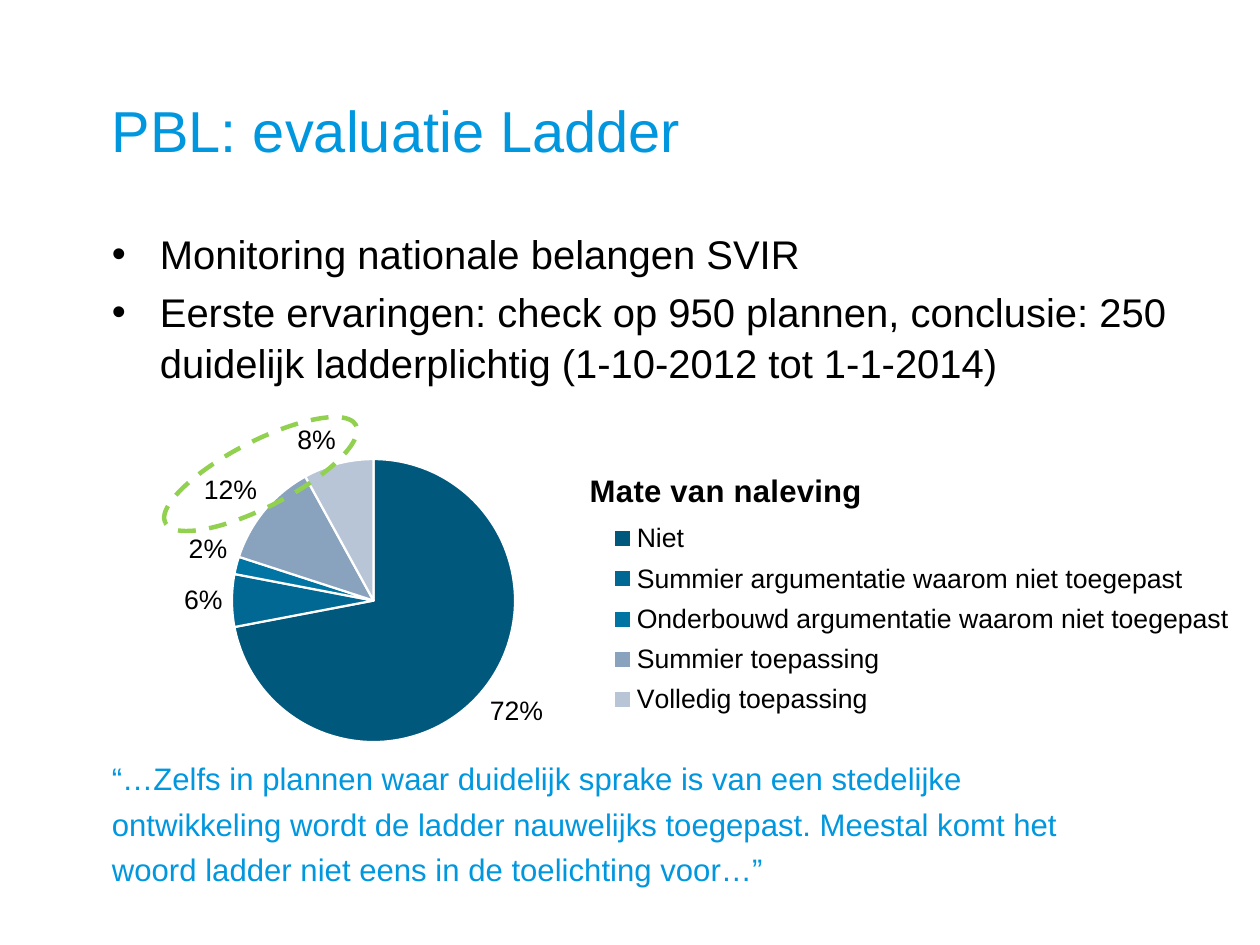
from dataclasses import dataclass

from lxml import etree
from pptx import Presentation
from pptx import util as u
from pptx.chart.data import CategoryChartData
from pptx.dml.color import RGBColor
from pptx.enum import chart as charts, dml, shapes, text
from pptx.oxml import ns

FONT = "Arial"
BLUE = RGBColor(0x01, 0x97, 0xDF)
BLACK = RGBColor(0x00, 0x00, 0x00)
WHITE = RGBColor(0xFF, 0xFF, 0xFF)
GREEN = RGBColor(0x92, 0xD0, 0x50)


@dataclass(frozen=True)
class Box:
    left: float
    top: float
    width: float
    height: float

    def lengths(self) -> tuple:
        return tuple(u.Inches(n) for n in (self.left, self.top, self.width, self.height))


@dataclass(frozen=True)
class TextStyle:
    size: float
    color: RGBColor
    line_spacing: float = 1.0
    space_before: float = 0
    bulleted: bool = False


@dataclass(frozen=True)
class Slice:
    label: str
    value: int
    color: RGBColor


TITLE_STYLE = TextStyle(26, BLUE)
LIST_STYLE = TextStyle(18, BLACK, 1.05, 3.6, True)
QUOTE_STYLE = TextStyle(14, BLUE, 1.05, 2.8)

BULLETS = [
    "Monitoring nationale belangen SVIR",
    "Eerste ervaringen: check op 950 plannen, conclusie: 250 duidelijk "
    "ladderplichtig (1-10-2012 tot 1-1-2014)",
]
QUOTE = [
    "“…Zelfs in plannen waar duidelijk sprake is van een stedelijke",
    "ontwikkeling wordt de ladder nauwelijks toegepast. Meestal komt het",
    "woord ladder niet eens in de toelichting voor…”",
]
CHART_TITLE = "Mate van naleving"
SLICES = [
    Slice("Niet", 72, RGBColor(0x00, 0x59, 0x7D)),
    Slice("Summier argumentatie waarom niet toegepast", 6, RGBColor(0x00, 0x68, 0x92)),
    Slice("Onderbouwd argumentatie waarom niet toegepast", 2, RGBColor(0x00, 0x75, 0xA4)),
    Slice("Summier toepassing", 12, RGBColor(0x89, 0xA3, 0xBF)),
    Slice("Volledig toepassing", 8, RGBColor(0xB8, 0xC5, 0xD6)),
]


def set_font(font, size: float, color: RGBColor = BLACK, bold: bool = False) -> None:
    font.name = FONT
    font.size = u.Pt(size)
    font.bold = bold
    font.color.rgb = color


def write_text(shape, box: Box, lines: list[str], style: TextStyle) -> None:
    shape.left, shape.top, shape.width, shape.height = box.lengths()
    frame = shape.text_frame
    frame.word_wrap = True
    frame.auto_size = text.MSO_AUTO_SIZE.NONE
    frame.vertical_anchor = text.MSO_ANCHOR.TOP
    frame.margin_left = frame.margin_right = u.Inches(0.08)
    frame.margin_top = frame.margin_bottom = u.Inches(0.04)
    for index, line in enumerate(lines):
        paragraph = frame.add_paragraph() if index else frame.paragraphs[0]
        paragraph.alignment = text.PP_ALIGN.LEFT
        paragraph.line_spacing = style.line_spacing
        paragraph.space_before = u.Pt(style.space_before if index else 0)
        if style.bulleted:
            properties = paragraph._p.get_or_add_pPr()
            properties.set("marL", str(u.Inches(0.3)))
            properties.set("indent", str(-u.Inches(0.3)))
            etree.SubElement(properties, ns.qn("a:buChar")).set("char", "•")
        run = paragraph.add_run()
        run.text = line
        set_font(run.font, style.size, style.color)


def place_part(part, position: int, **fractions: float) -> None:
    for layout in part.findall(ns.qn("c:layout")):
        part.remove(layout)
    layout = etree.Element(ns.qn("c:layout"))
    manual = etree.SubElement(layout, ns.qn("c:manualLayout"))
    if "w" in fractions:
        etree.SubElement(manual, ns.qn("c:layoutTarget")).set("val", "inner")
    for axis in ("x", "y"):
        etree.SubElement(manual, ns.qn(f"c:{axis}Mode")).set("val", "edge")
    for name, fraction in fractions.items():
        etree.SubElement(manual, ns.qn(f"c:{name}")).set("val", str(fraction))
    part.insert(position, layout)


def add_pie(slide, box: Box, slices: list[Slice]) -> None:
    data = CategoryChartData()
    data.categories = [item.label for item in slices]
    data.add_series(CHART_TITLE, [item.value for item in slices])
    chart = slide.shapes.add_chart(charts.XL_CHART_TYPE.PIE, *box.lengths(), data).chart
    set_font(chart.font, 12)

    chart.has_title = True
    run = chart.chart_title.text_frame.paragraphs[0].add_run()
    run.text = CHART_TITLE
    set_font(run.font, 14, bold=True)

    chart.has_legend = True
    chart.legend.position = charts.XL_LEGEND_POSITION.RIGHT
    chart.legend.include_in_layout = False
    set_font(chart.legend.font, 12)

    plot = chart.plots[0]
    plot.has_data_labels = True
    labels = plot.data_labels
    labels.show_percentage = True
    labels.show_value = False
    labels.number_format = "0%"
    labels.number_format_is_linked = False
    labels.position = charts.XL_LABEL_POSITION.OUTSIDE_END
    set_font(labels.font, 12)

    for index, item in enumerate(slices):
        point = plot.series[0].points[index].format
        point.fill.solid()
        point.fill.fore_color.rgb = item.color
        point.line.color.rgb = WHITE
        point.line.width = u.Pt(1)

    plot_area = chart._chartSpace.chart.plotArea
    place_part(plot_area, 0, x=0.07, y=0.21, w=0.26, h=0.53)
    place_part(chart.chart_title._element, 1, x=0.39, y=0.22)
    place_part(chart.legend._element, 1, x=0.39, y=0.31, w=0.61, h=0.4)


def add_highlight(slide, box: Box) -> None:
    ellipse = slide.shapes.add_shape(shapes.MSO_SHAPE.OVAL, *box.lengths())
    ellipse.shadow.inherit = False
    ellipse.rotation = 332.8
    ellipse.fill.background()
    ellipse.line.color.rgb = GREEN
    ellipse.line.width = u.Pt(2)
    ellipse.line.dash_style = dml.MSO_LINE.DASH


def main() -> None:
    presentation = Presentation()
    presentation.slide_width = u.Inches(7.88)
    presentation.slide_height = u.Inches(5.91)
    slide = presentation.slides.add_slide(presentation.slide_layouts[1])
    write_text(slide.shapes.title, Box(0.62, 0.55, 6.97, 0.7),
               ["PBL: evaluatie Ladder"], TITLE_STYLE)
    write_text(slide.placeholders[1], Box(0.62, 1.38, 6.97, 1.1), BULLETS, LIST_STYLE)
    quote_box = Box(0.62, 4.7, 6.97, 0.9)
    quote = slide.shapes.add_textbox(*quote_box.lengths())
    write_text(quote, quote_box, QUOTE, QUOTE_STYLE)
    add_pie(slide, Box(0.95, 2.17, 6.93, 3.34), SLICES)
    add_highlight(slide, Box(0.96, 2.76, 1.34, 0.41))
    presentation.save("out.pptx")


if __name__ == "__main__":
    main()
